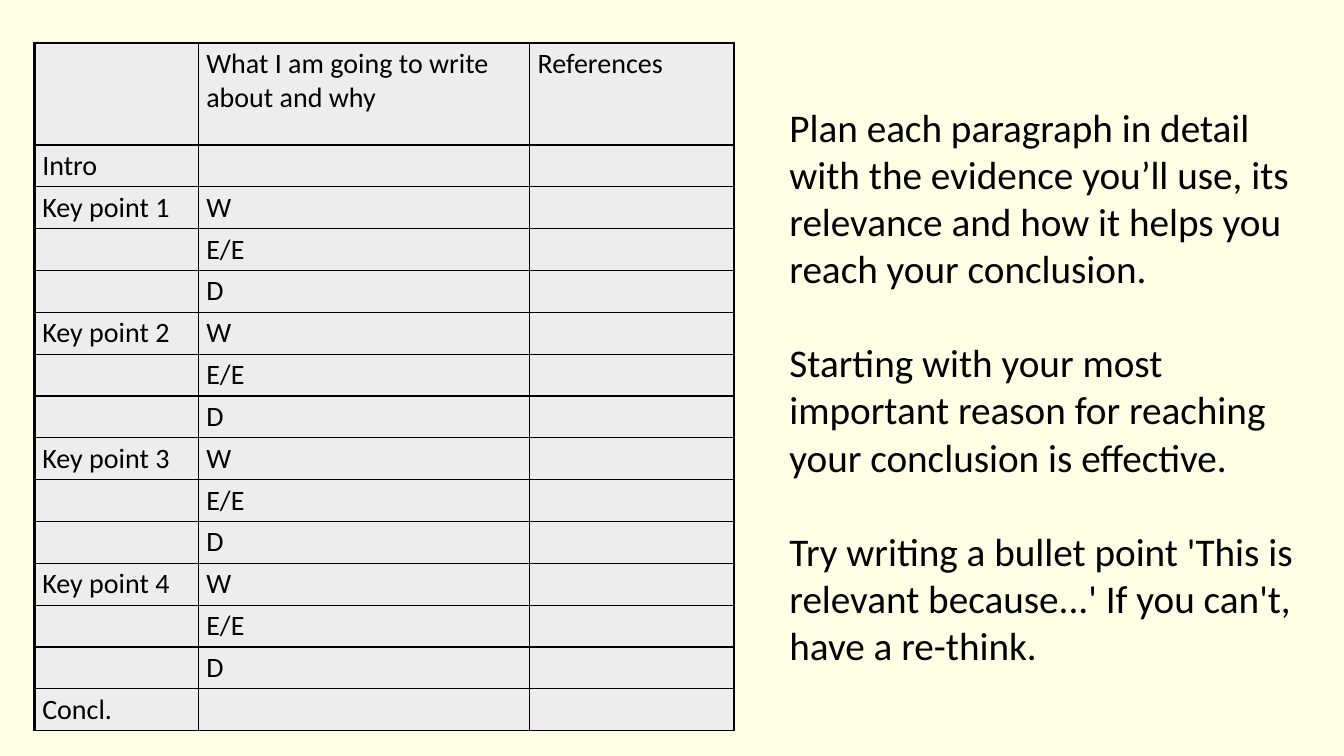
"""Build a slide with an essay planning table and advice on planning paragraphs."""
import lxml.etree
import pptx
import pptx.dml.color
import pptx.oxml.ns
import pptx.util

Pt = pptx.util.Pt
COLOURS = {"background": "FEFFE5", "cell": "EDEDED", "ink": "000000"}
FONT = "Calibri"


def rgb(name):
    return pptx.dml.color.RGBColor.from_string(COLOURS[name])


def add_border(cell, side, width):
    qn = pptx.oxml.ns.qn
    properties = cell._tc.get_or_add_tcPr()
    border = lxml.etree.SubElement(properties, qn(f"a:ln{side}"), w=str(Pt(width)))
    fill = lxml.etree.SubElement(border, qn("a:solidFill"))
    lxml.etree.SubElement(fill, qn("a:srgbClr"), val=COLOURS["ink"])


deck = pptx.Presentation()
deck.slide_width, deck.slide_height = Pt(960), Pt(540)
slide = deck.slides.add_slide(deck.slide_layouts[6])
slide.background.fill.solid()
slide.background.fill.fore_color.rgb = rgb("background")

advice_texts = [
    "Plan each paragraph in detail with the evidence you’ll use, its relevance "
    "and how it helps you reach your conclusion.",
    "Starting with your most important reason for reaching your conclusion is effective.",
    "Try writing a bullet point 'This is relevant because...' If you can't, have a re-think.",
]
advice = slide.shapes.add_textbox(Pt(556.8), Pt(11.5), Pt(378.7), Pt(494.6)).text_frame
advice.word_wrap = True
advice.margin_top = Pt(62)
advice.text = "\n".join(advice_texts)
for number, paragraph in enumerate(advice.paragraphs):
    if number:
        paragraph.space_before = Pt(34)
    font = paragraph.runs[0].font
    font.name, font.size = FONT, Pt(28)
    font.color.rgb = rgb("ink")

plan_rows = [["", "What I am going to write about and why", "References"], ["Intro", "", ""]]
for point in range(1, 5):
    plan_rows += [[f"Key point {point}", "W", ""], ["", "E/E", ""], ["", "D", ""]]
plan_rows.append(["Concl.", "", ""])

column_widths = [117.2, 236.7, 146]
row_heights = [72.9] + [29.9] * (len(plan_rows) - 1)
plan = slide.shapes.add_table(
    len(plan_rows), len(column_widths), Pt(24.5), Pt(30.7),
    Pt(sum(column_widths)), Pt(sum(row_heights)),
).table
plan.first_row = False
plan.horz_banding = False
for column, width in zip(plan.columns, column_widths):
    column.width = Pt(width)

last_column = len(column_widths) - 1
for row_number, (row, height, texts) in enumerate(zip(plan.rows, row_heights, plan_rows)):
    row.height = Pt(height)
    for column_number, (cell, text) in enumerate(zip(row.cells, texts)):
        cell.margin_left = cell.margin_right = Pt(5.7)
        cell.margin_top = cell.margin_bottom = Pt(2.7)
        add_border(cell, "L", 2.25 if column_number == 0 else 1)
        add_border(cell, "R", 2.25 if column_number == last_column else 1)
        add_border(cell, "T", 2.25 if row_number == 0 else 1)
        add_border(cell, "B", 1)
        cell.fill.solid()
        cell.fill.fore_color.rgb = rgb("cell")
        if text:
            cell.text_frame.text = text
            font = cell.text_frame.paragraphs[0].runs[0].font
            font.name, font.size = FONT, Pt(20)
            font.color.rgb = rgb("ink")

deck.save("out.pptx")
